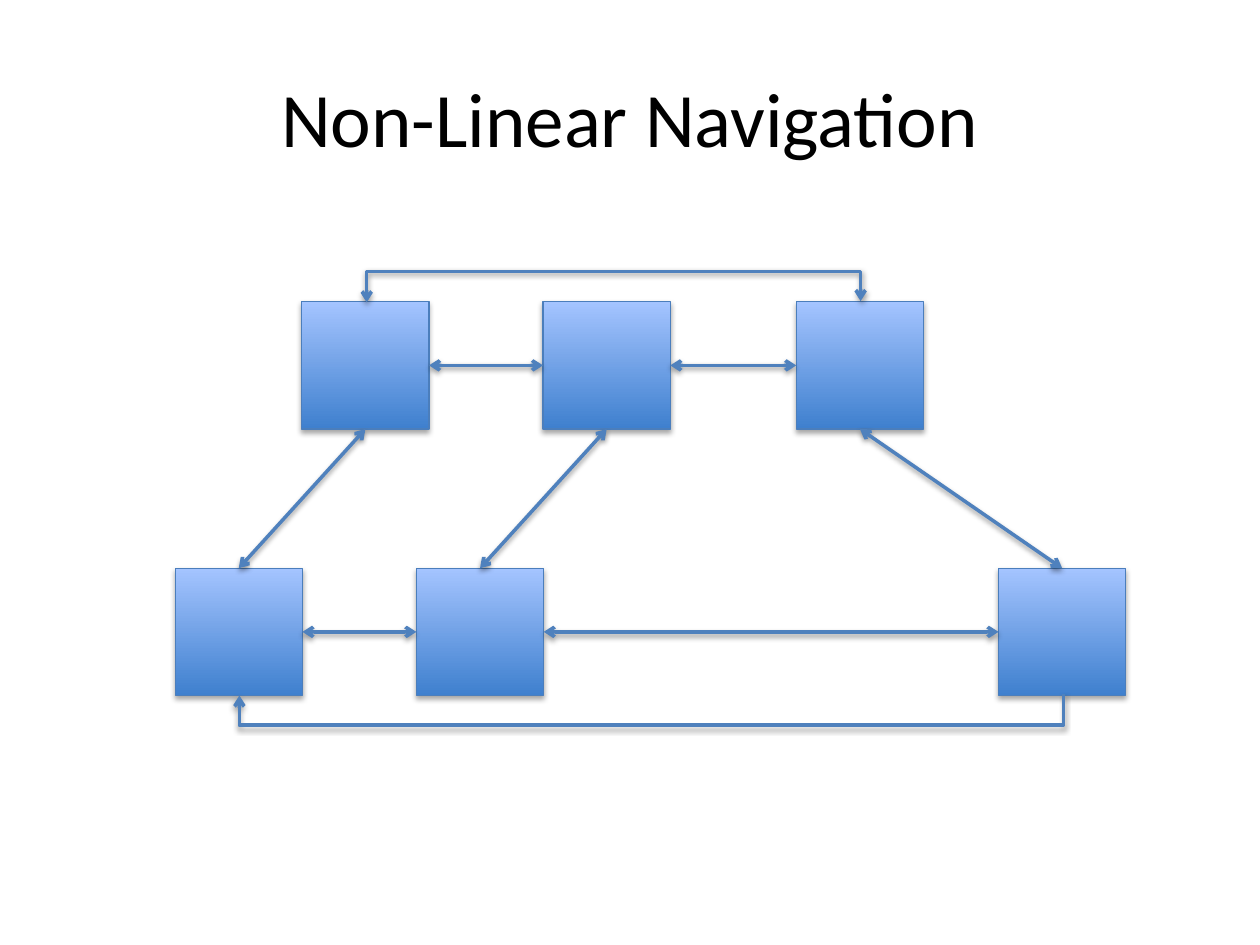
"""Draw the slide on non-linear navigation."""
import dataclasses
import lxml.etree
import pptx
import pptx.dml.color
import pptx.enum.shapes
import pptx.enum.text
import pptx.oxml
import pptx.oxml.ns
import pptx.util

TOP, LEFT, BASE, RIGHT = range(4)


@dataclasses.dataclass
class Theme:
    """Hold the colours, type and line sizes."""
    font: str = "Calibri"
    size: int = 44
    ink: str = "000000"
    low: str = "3F80CE"
    high: str = "A4C4FF"
    edge: str = "4B7EBC"
    link: str = "4F81BD"
    thin: float = 0.75
    thick: float = 2


class Board:
    """Draw on one slide with a grid of 100 columns and 75 rows."""

    def __init__(self, deck, theme):
        """Add a slide that has only a title."""
        self.theme = theme
        self.unit = deck.slide_width / 100
        self.slide = deck.slides.add_slide(deck.slide_layouts[5])

    def grid(self, *cells):
        """Turn grid steps into lengths."""
        return [pptx.util.Emu(round(cell * self.unit)) for cell in cells]

    def tint(self, code):
        """Turn a hex code into a colour."""
        return pptx.dml.color.RGBColor.from_string(code)

    def title(self, text, *place):
        """Fill and place the title."""
        head = self.slide.shapes.title
        head.left, head.top, head.width, head.height = self.grid(*place)
        frame = head.text_frame
        frame.text = text
        frame.vertical_anchor = pptx.enum.text.MSO_ANCHOR.MIDDLE
        line = frame.paragraphs[0]
        line.alignment = pptx.enum.text.PP_ALIGN.CENTER
        font = line.runs[0].font
        font.name, font.size = self.theme.font, pptx.util.Pt(self.theme.size)
        font.color.rgb = self.tint(self.theme.ink)

    def stroke(self, line, code, width):
        """Set the colour and width of a line."""
        line.color.rgb = self.tint(code)
        line.width = pptx.util.Pt(width)

    def shade(self, shape, drop, alpha):
        """Cast a soft shadow straight down."""
        shape.element.spPr.append(pptx.oxml.parse_xml(
            f'<a:effectLst {pptx.oxml.ns.nsdecls("a")}>'
            f'<a:outerShdw blurRad="{pptx.util.Pt(3.1)}" dist="{pptx.util.Pt(drop)}"'
            ' dir="5400000" rotWithShape="0"><a:srgbClr val="000000">'
            f'<a:alpha val="{alpha * 1000}"/></a:srgbClr></a:outerShdw></a:effectLst>'))

    def box(self, left, top, side=10.1):
        """Add a square page with a gradient."""
        kind = pptx.enum.shapes.MSO_SHAPE.RECTANGLE
        page = self.slide.shapes.add_shape(kind, *self.grid(left, top, side, side))
        page.fill.gradient()
        page.fill.gradient_angle = 90
        for stop, code in zip(page.fill.gradient_stops, (self.theme.low, self.theme.high)):
            stop.color.rgb = self.tint(code)
        self.stroke(page.line, self.theme.edge, self.theme.thin)
        self.shade(page, 1.8, 35)
        return page

    def wire(self, kind, ends, tips):
        """Add a line with arrow tips."""
        wire = self.slide.shapes.add_connector(kind, *ends)
        self.stroke(wire.line, self.theme.link, self.theme.thick)
        edge = wire.line._get_or_add_ln()
        for tip in tips:
            name = pptx.oxml.ns.qn(f"a:{tip}End")
            lxml.etree.SubElement(edge, name, type="arrow")
        self.shade(wire, 1.6, 38)
        return wire

    def join(self, first, start, last, end):
        """Link two pages with a straight arrow."""
        kind = pptx.enum.shapes.MSO_CONNECTOR.STRAIGHT
        wire = self.wire(kind, (0, 0, 0, 0), ("head", "tail"))
        wire.begin_connect(first, start)
        wire.end_connect(last, end)

    def loop(self, left, right, row, tips, up, rise=2.5, slim=0.1):
        """Bend an arrow round a row of pages."""
        mid, half = (left + right) / 2, (right - left) / 2
        ends = [mid - slim / 2, row - half, mid + slim / 2, row + half]
        if up:
            ends = ends[2:] + ends[:2]
        kind = pptx.enum.shapes.MSO_CONNECTOR.ELBOW
        wire = self.wire(kind, self.grid(*ends), tips)
        shape = wire.element.spPr
        shape.find(pptx.oxml.ns.qn("a:xfrm")).set("rot", "5400000")
        guides = shape.find(".//" + pptx.oxml.ns.qn("a:avLst"))
        lxml.etree.SubElement(guides, pptx.oxml.ns.qn("a:gd"), name="adj1",
                              fmla=f"val {round(rise / slim * 100000)}")


def main():
    """Build and save the deck."""
    deck = pptx.Presentation()
    deck.slide_width, deck.slide_height = pptx.util.Inches(10), pptx.util.Inches(7.5)
    board = Board(deck, Theme())
    board.title("Non-Linear Navigation", 5, 3, 90, 12.5)
    upper = [board.box(left, 23.95) for left in (23.95, 43.1, 63.2)]
    lower = [board.box(left, 45.1) for left in (13.9, 33.05, 79.25)]
    for row in (upper, lower):
        for first, last in zip(row, row[1:]):
            board.join(first, RIGHT, last, LEFT)
    for first, last in zip(upper, lower):
        board.join(first, BASE, last, TOP)
    board.loop(29.1, 68.3, 23.95, ("head", "tail"), up=True)
    board.loop(19, 84.4, 55.15, ("tail",), up=False)
    deck.save("out.pptx")


if __name__ == "__main__":
    main()
